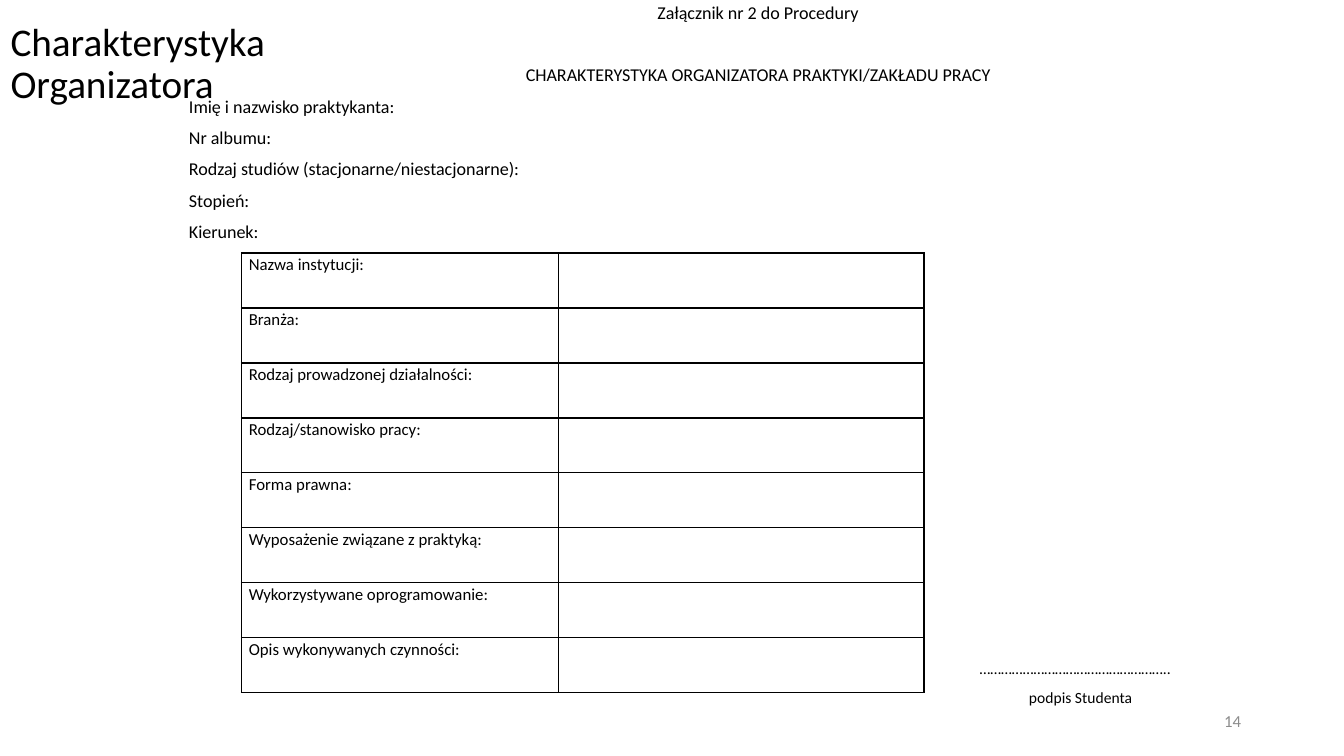
from dataclasses import dataclass
from typing import Any

from lxml.etree import SubElement
from pptx import Presentation
from pptx.dml.color import RGBColor
from pptx.enum.text import MSO_ANCHOR, PP_ALIGN
from pptx.oxml.ns import qn
from pptx.util import Emu, Pt

EMU_PER_PX = 9525
BLACK = RGBColor(0x00, 0x00, 0x00)
GRAY = RGBColor(0x8C, 0x8C, 0x8C)
FONT = "Calibri"


@dataclass(frozen=True)
class Line:
    text: str
    align: PP_ALIGN = PP_ALIGN.LEFT
    before: float = 10


@dataclass(frozen=True)
class TextBlock:
    left: int
    top: int
    width: int
    height: int
    lines: tuple[Line, ...]
    size: float
    spacing: float = 1.0
    color: RGBColor = BLACK
    anchor: MSO_ANCHOR = MSO_ANCHOR.TOP
    inset_x: int = 10
    inset_y: int = 5


TITLE = TextBlock(
    0, 0, 381, 123, (Line("Charakterystyka\vOrganizatora", before=0),),
    28, 0.9, anchor=MSO_ANCHOR.MIDDLE,
)
FORM_HEADER = TextBlock(
    170, 0, 1104, 240,
    (
        Line("Załącznik nr 2 do Procedury", PP_ALIGN.CENTER, 0),
        Line("CHARAKTERYSTYKA ORGANIZATORA PRAKTYKI/ZAKŁADU PRACY", PP_ALIGN.CENTER, 32.5),
        Line("Imię i nazwisko praktykanta:"),
        Line("Nr albumu:"),
        Line("Rodzaj studiów (stacjonarne/niestacjonarne):"),
        Line("Stopień:"),
        Line("Kierunek:"),
    ),
    12.9, 0.8,
)
SIGNATURE_DOTS = TextBlock(
    933, 631, 200, 16, (Line("……………………………………………..", before=0),),
    11.1, 0.8, inset_x=0, inset_y=0,
)
SIGNATURE_CAPTION = TextBlock(
    980, 659, 150, 16, (Line("podpis Studenta", before=0),),
    11.1, 0.8, inset_x=0, inset_y=0,
)
PAGE_NUMBER = TextBlock(
    904, 667, 288, 38, (Line("14", PP_ALIGN.RIGHT, 0),),
    12, color=GRAY, anchor=MSO_ANCHOR.MIDDLE,
)
INSTITUTION_FIELDS = (
    "Nazwa instytucji:",
    "Branża:",
    "Rodzaj prowadzonej działalności:",
    "Rodzaj/stanowisko pracy:",
    "Forma prawna:",
    "Wyposażenie związane z praktyką:",
    "Wykorzystywane oprogramowanie:",
    "Opis wykonywanych czynności:",
)
COLUMN_WIDTHS = (302, 348)
FORM_HEIGHT = 419


def px(length: int) -> Emu:
    return Emu(length * EMU_PER_PX)


def apply(target: Any, values: dict[str, Any]) -> None:
    for name, value in values.items():
        setattr(target, name, value)


def style_font(font: Any, size: float, color: RGBColor) -> None:
    apply(font, {"name": FONT, "size": Pt(size)})
    font.color.rgb = color


def draw_text(slide: Any, block: TextBlock) -> None:
    box = slide.shapes.add_textbox(
        px(block.left), px(block.top), px(block.width), px(block.height)
    )
    frame = box.text_frame
    apply(frame, {
        "word_wrap": True,
        "vertical_anchor": block.anchor,
        "margin_left": px(block.inset_x),
        "margin_right": px(block.inset_x),
        "margin_top": px(block.inset_y),
        "margin_bottom": px(block.inset_y),
    })
    for index, line in enumerate(block.lines):
        paragraph = frame.add_paragraph() if index else frame.paragraphs[0]
        apply(paragraph, {
            "text": line.text,
            "alignment": line.align,
            "line_spacing": block.spacing,
        })
        if line.before:
            paragraph.space_before = Pt(line.before)
        for run in paragraph.runs:
            style_font(run.font, block.size, block.color)


def draw_borders(cell: Any) -> None:
    properties = cell._tc.get_or_add_tcPr()
    for position, side in enumerate(("lnL", "lnR", "lnT", "lnB")):
        border = properties.makeelement(qn(f"a:{side}"), {"w": str(Pt(1))})
        fill = SubElement(border, qn("a:solidFill"))
        SubElement(fill, qn("a:srgbClr"), {"val": str(BLACK)})
        properties.insert(position, border)


def draw_form(slide: Any) -> None:
    form = slide.shapes.add_table(
        len(INSTITUTION_FIELDS), len(COLUMN_WIDTHS),
        px(230), px(241), px(sum(COLUMN_WIDTHS)), px(FORM_HEIGHT),
    ).table
    apply(form, {"first_row": False, "horz_banding": False})
    for column, width in zip(form.columns, COLUMN_WIDTHS):
        column.width = px(width)
    for row, label in zip(form.rows, INSTITUTION_FIELDS):
        for cell, text in zip(row.cells, (label, "")):
            apply(cell, {
                "text": text,
                "vertical_anchor": MSO_ANCHOR.TOP,
                "margin_left": px(7),
                "margin_right": px(7),
                "margin_top": 0,
                "margin_bottom": 0,
            })
            cell.fill.background()
            draw_borders(cell)
            paragraph = cell.text_frame.paragraphs[0]
            paragraph.line_spacing = 1.07
            style_font(paragraph.font, 12, BLACK)


def main() -> None:
    presentation = Presentation()
    apply(presentation, {"slide_width": px(1280), "slide_height": px(720)})
    slide = presentation.slides.add_slide(presentation.slide_layouts[6])
    for block in (TITLE, FORM_HEADER, SIGNATURE_DOTS, SIGNATURE_CAPTION, PAGE_NUMBER):
        draw_text(slide, block)
    draw_form(slide)
    presentation.save("out.pptx")


if __name__ == "__main__":
    main()
